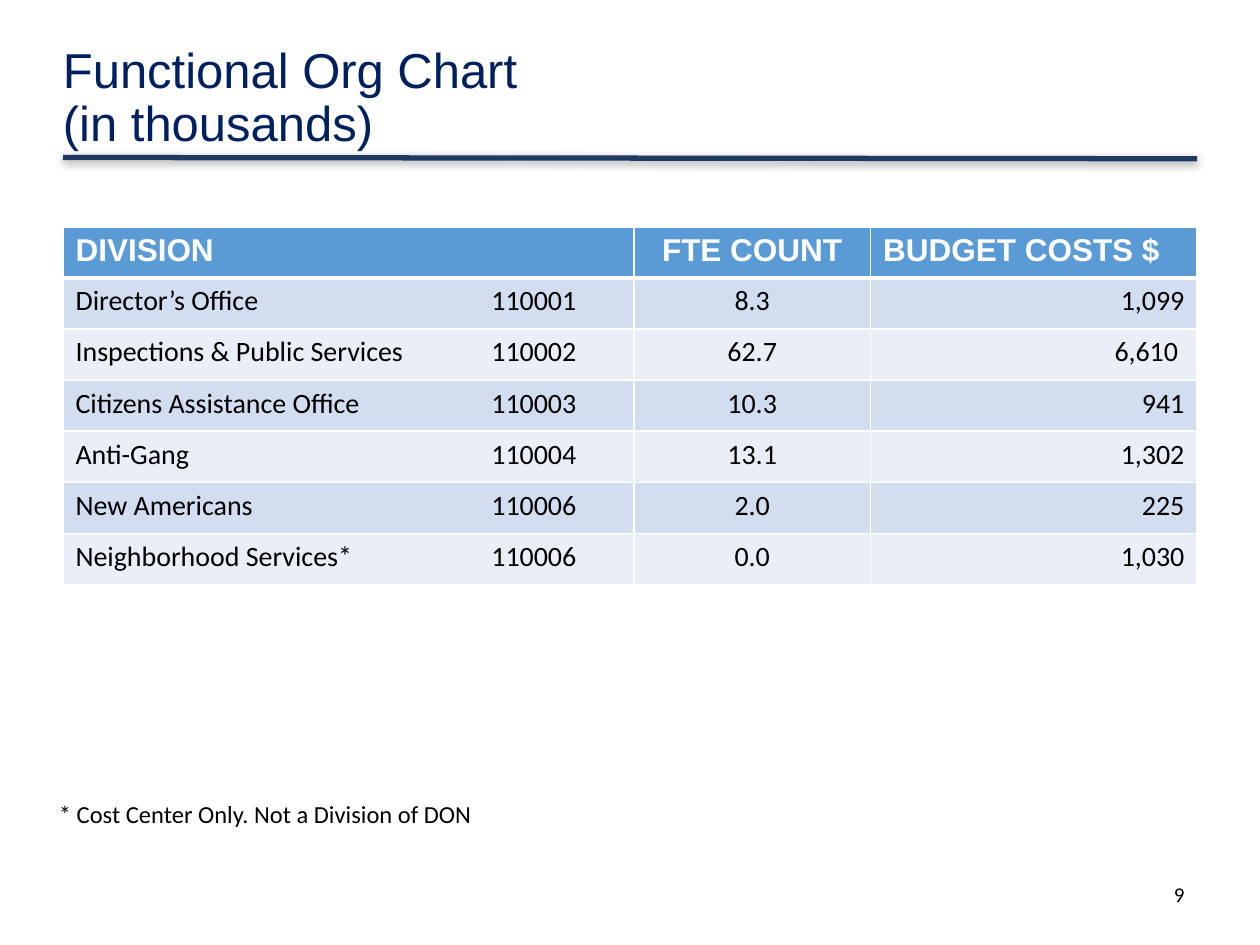
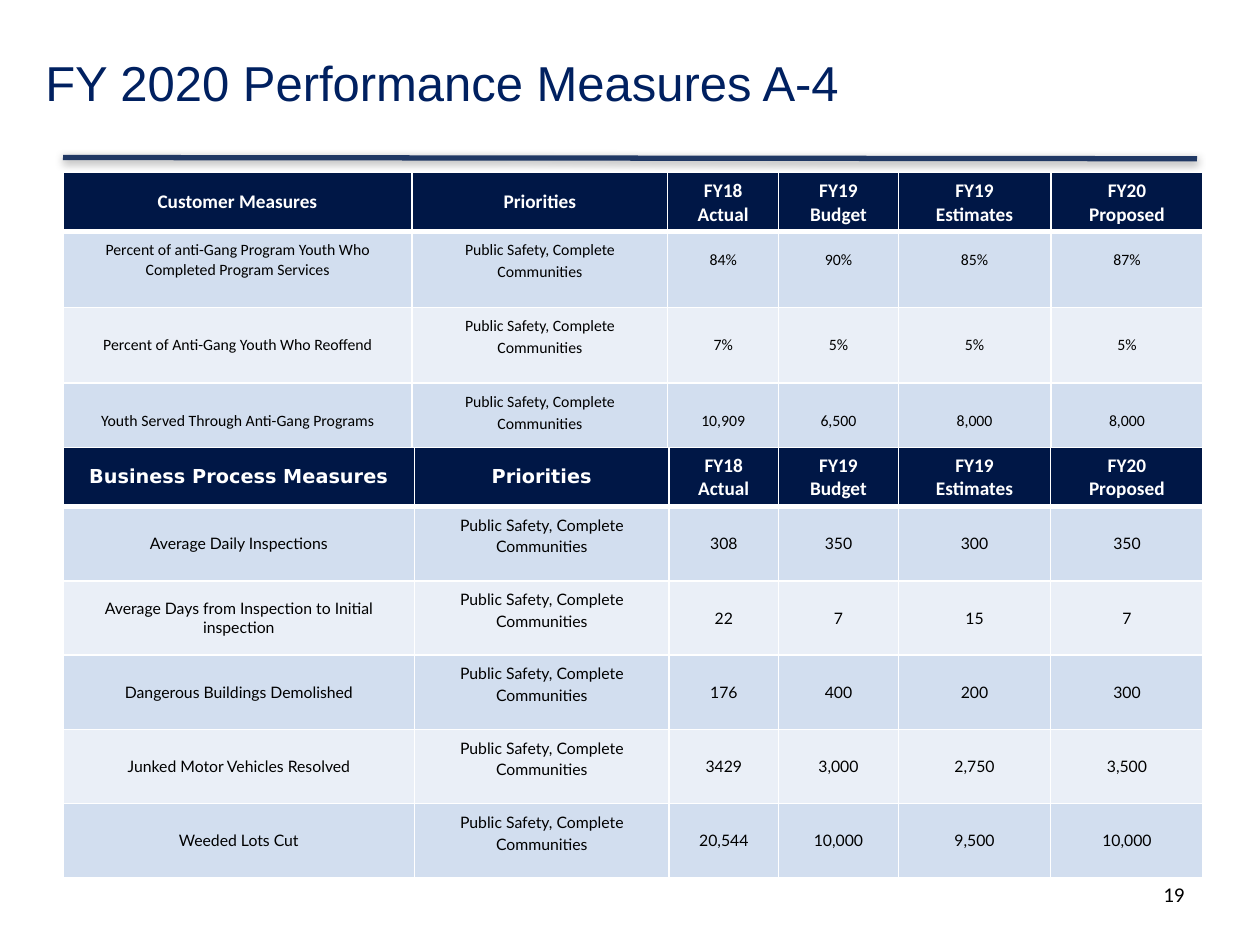
from lxml import etree
from pptx import Presentation
from pptx.dml.color import RGBColor
from pptx.enum.shapes import MSO_CONNECTOR
from pptx.enum.text import MSO_ANCHOR, PP_ALIGN
from pptx.oxml import parse_xml
from pptx.oxml.ns import nsdecls, qn
from pptx.util import Inches, Pt

LEFT, CENTER, RIGHT = PP_ALIGN.LEFT, PP_ALIGN.CENTER, PP_ALIGN.RIGHT
TOP, MIDDLE = MSO_ANCHOR.TOP, MSO_ANCHOR.MIDDLE
STRAIGHT = MSO_CONNECTOR.STRAIGHT

BLACK = RGBColor(0x00, 0x00, 0x00)
WHITE = RGBColor(0xFF, 0xFF, 0xFF)
TITLE_NAVY = RGBColor(0x00, 0x20, 0x60)
RULE_NAVY = RGBColor(0x20, 0x38, 0x64)
HEADER_BLUE = RGBColor(0x5B, 0x9B, 0xD5)
HEADER_NAVY = RGBColor(0x00, 0x17, 0x46)
BANDS = [RGBColor(0xD2, 0xDE, 0xEF), RGBColor(0xEA, 0xEF, 0xF7)]

TITLE_FONT = {"name": "Arial", "size": Pt(28)}
PAGE_FONT = {"name": "Calibri", "size": Pt(12)}
NOTE_FONT = {"name": "Calibri", "size": Pt(14)}
DIVISION_HEAD = {"name": "Arial", "size": Pt(18), "bold": True}
DIVISION_BODY = {"name": "Calibri", "size": Pt(16), "bold": False}
MEASURE_HEAD = {"name": "Calibri", "size": Pt(11), "bold": True}
MEASURE_BODY = {"name": "Calibri", "size": Pt(9), "bold": False}

NO_MARGINS = {f"margin_{side}": 0 for side in ("left", "top", "right", "bottom")}
SHADOW = (
    f'<a:effectLst {nsdecls("a")}><a:outerShdw blurRad="63500" dist="20320" '
    'dir="5400000" rotWithShape="0"><a:srgbClr val="000000">'
    '<a:alpha val="38000"/></a:srgbClr></a:outerShdw></a:effectLst>'
)


def write(frame, text, font, color, align=LEFT, spacing=None, tab=None):
    """Fill a text frame, one paragraph per line of text."""
    frame.text = text
    for paragraph in frame.paragraphs:
        paragraph.alignment = align
        paragraph.line_spacing = spacing
        if tab:
            tabs = etree.SubElement(paragraph._p.get_or_add_pPr(), qn("a:tabLst"))
            etree.SubElement(tabs, qn("a:tab"), pos=str(tab), algn="l")
        for run in paragraph.runs:
            for key, value in font.items():
                setattr(run.font, key, value)
            run.font.color.rgb = color


def add_grid(slide, top, widths, heights, header_fill):
    """Add a banded table with white borders and return it."""
    grid = slide.shapes.add_table(len(heights), len(widths), Inches(0.5), top,
                                  Inches(sum(widths)), sum(heights)).table
    for column, width in zip(grid.columns, widths):
        column.width = Inches(width)
    for r, height in enumerate(heights):
        grid.rows[r].height = height
        for cell in grid.rows[r].cells:
            properties = cell._tc.get_or_add_tcPr()
            for side in "LRTB":
                thick = (r == 0 and side == "B") or (r == 1 and side == "T")
                properties.append(parse_xml(
                    f'<a:ln{side} {nsdecls("a")} w="{Pt(3 if thick else 1)}">'
                    f'<a:solidFill><a:srgbClr val="{WHITE}"/></a:solidFill></a:ln{side}>'))
            cell.fill.solid()
            cell.fill.fore_color.rgb = BANDS[(r - 1) % 2] if r else header_fill
    return grid


prs = Presentation()
prs.slide_width, prs.slide_height = Inches(10), Inches(7.5)

# Shared parts: rule, title and page number
pages = [
    ("Functional Org Chart\v(in thousands)", 0.5, 0.33, 0, "9"),
    ("FY 2020 Performance Measures A-4", 0.36, 0.42, 0.4, "19"),
]
slides = []
for title, left, top, bottom_margin, number in pages:
    slide = prs.slides.add_slide(prs.slide_layouts[6])
    slides.append(slide)

    rule = slide.shapes.add_connector(STRAIGHT, Inches(0.5), Inches(1.25),
                                      Inches(9.5), Inches(1.26))
    rule.line.color.rgb = RULE_NAVY
    rule.line.width = Pt(3)
    rule._element.spPr.append(parse_xml(SHADOW))

    heading = slide.shapes.add_textbox(Inches(left), Inches(top),
                                       Inches(6.86), Inches(0.92)).text_frame
    layout = {**NO_MARGINS, "margin_bottom": Inches(bottom_margin),
              "word_wrap": True, "vertical_anchor": MIDDLE}
    for key, value in layout.items():
        setattr(heading, key, value)
    write(heading, title, TITLE_FONT, TITLE_NAVY, spacing=0.9)

    page_number = slide.shapes.add_textbox(Inches(7.17), Inches(6.95),
                                           Inches(2.33), Inches(0.4)).text_frame
    page_number.word_wrap = True
    write(page_number, number, PAGE_FONT, BLACK, RIGHT)

org_slide, measures_slide = slides

# Divisions table
divisions = [
    ("DIVISION", "FTE COUNT", "BUDGET COSTS $"),
    ("Director’s Office\t110001", "8.3", "1,099"),
    ("Inspections & Public Services\t110002", "62.7", "6,610 "),
    ("Citizens Assistance Office\t110003", "10.3", "941"),
    ("Anti-Gang\t110004", "13.1", "1,302"),
    ("New Americans\t110006", "2.0", "225"),
    ("Neighborhood Services*\t110006", "0.0", "1,030"),
]
row_height = Inches(2.84) // len(divisions)
division_grid = add_grid(org_slide, Inches(1.8), [4.53, 1.88, 2.59],
                         [row_height] * len(divisions), HEADER_BLUE)
for r, division in enumerate(divisions):
    for c, text in enumerate(division):
        frame = division_grid.cell(r, c).text_frame
        if r == 0:
            write(frame, text, DIVISION_HEAD, WHITE, (LEFT, CENTER, LEFT)[c])
        else:
            write(frame, text, DIVISION_BODY, BLACK, (LEFT, CENTER, RIGHT)[c],
                  tab=Inches(3.3) if c == 0 else None)

# Footnote
footnote = org_slide.shapes.add_textbox(Inches(0.37), Inches(6.29),
                                        Inches(3.5), Inches(0.34)).text_frame
footnote.word_wrap = False
write(footnote, "* Cost Center Only. Not a Division of DON", NOTE_FONT, BLACK)

# Performance measures tables
PRIORITY = "Public Safety, Complete Communities"
YEARS = ["FY18\nActual", "FY19\nBudget", "FY19\nEstimates", "FY20\nProposed"]
customer = [
    ("Percent of anti-Gang Program Youth Who Completed Program Services",
     "84%", "90%", "85%", "87%"),
    ("Percent of Anti-Gang Youth Who Reoffend", "7%", "5%", "5%", "5%"),
    ("Youth Served Through Anti-Gang Programs", "10,909", "6,500", "8,000", "8,000"),
]
business = [
    ("Average Daily Inspections", "308", "350", "300", "350"),
    ("Average Days from Inspection to Initial inspection", "22", "7", "15", "7"),
    ("Dangerous Buildings Demolished", "176", "400", "200", "300"),
    ("Junked Motor Vehicles Resolved", "3429", "3,000", "2,750", "3,500"),
    ("Weeded Lots Cut", "20,544", "10,000", "9,500", "10,000"),
]
sections = [
    ("Customer Measures", customer, 1.37, 0.6, [2.77, 2.03, 0.88, 0.95, 1.21, 1.21],
     "Calibri", "Calibri"),
    ("Business Process Measures", business, 3.55, 0.59,
     [2.79, 2.02, 0.87, 0.95, 1.21, 1.21], "DejaVu Sans", "Lato"),
]
for name, measures, top, height, widths, label_font, body_font in sections:
    heights = [Inches(0.47)] + [Inches(height)] * len(measures)
    measure_grid = add_grid(measures_slide, Inches(top), widths, heights, HEADER_NAVY)

    for c, text in enumerate([name, "Priorities", *YEARS]):
        cell = measure_grid.cell(0, c)
        cell.vertical_anchor = MIDDLE
        font = {**MEASURE_HEAD, "name": label_font} if c < 2 else MEASURE_HEAD
        write(cell.text_frame, text, font, WHITE, CENTER)

    for r, (measure, *values) in enumerate(measures, start=1):
        for c, text in enumerate([measure, PRIORITY, *values]):
            cell = measure_grid.cell(r, c)
            is_priority = c == 1
            cell.vertical_anchor = TOP if is_priority else MIDDLE
            # The first customer row sits slightly above centre
            if measures is customer and r == 1 and not is_priority:
                cell.margin_bottom = Inches(0.2)
            write(cell.text_frame, text, {**MEASURE_BODY, "name": body_font}, BLACK,
                  CENTER, spacing=1.15 if is_priority else None)

prs.save("out.pptx")
